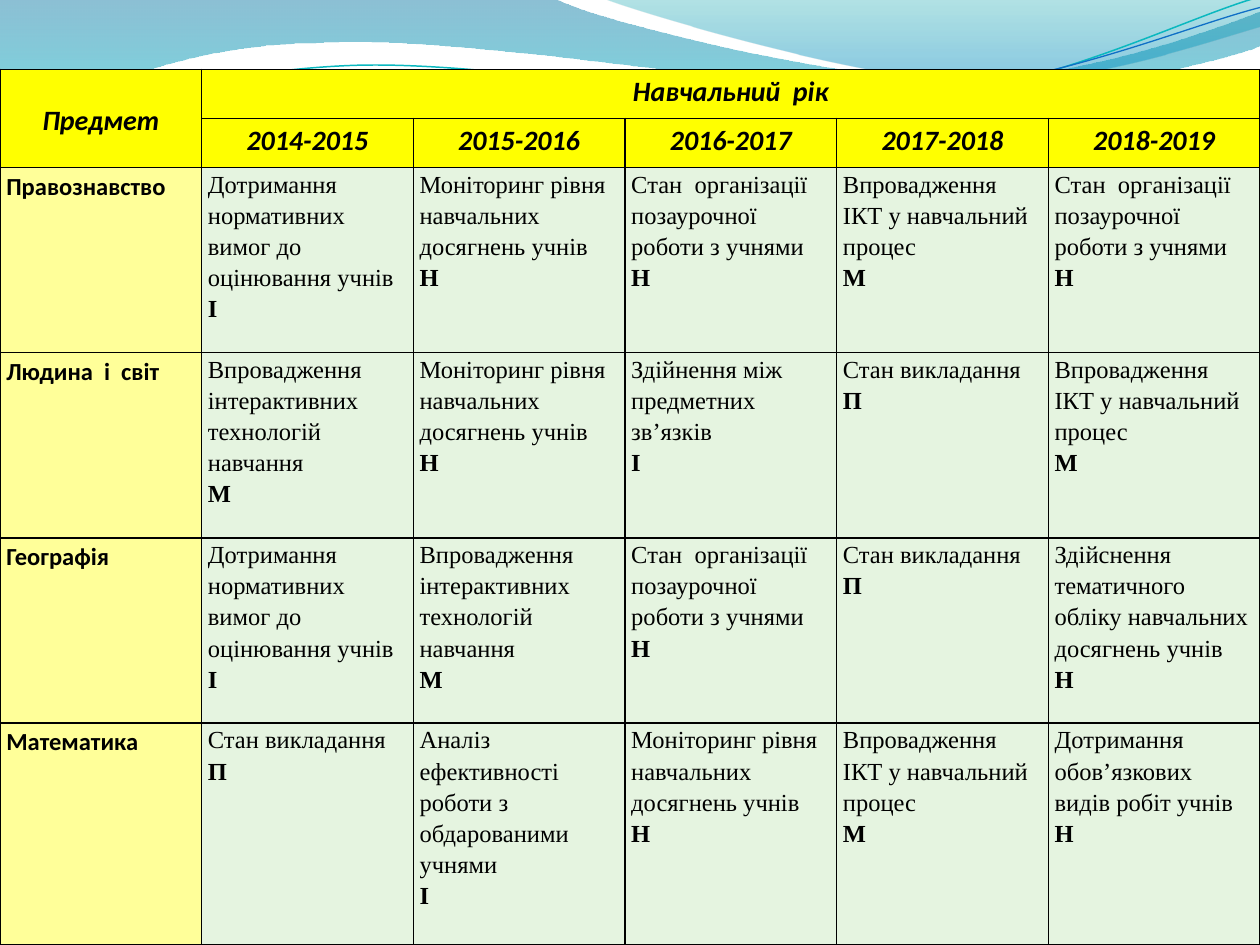
from math import cos, radians, sin

from lxml.etree import SubElement
from pptx import Presentation
from pptx.dml.color import RGBColor
from pptx.enum.text import MSO_ANCHOR, PP_ALIGN
from pptx.oxml.ns import qn
from pptx.util import Inches, Pt

BLACK = RGBColor(0x00, 0x00, 0x00)
YELLOW = RGBColor(0xFF, 0xFF, 0x00)
PALE_YELLOW = RGBColor(0xFF, 0xFF, 0x99)
PALE_GREEN = RGBColor(0xE5, 0xF4, 0xE0)
DEEP_BLUE = RGBColor(0x00, 0x74, 0xA1)
AQUA = RGBColor(0x00, 0xC6, 0xCF)
TEAL = RGBColor(0x00, 0xA1, 0xA9)
SKY_BLUE = RGBColor(0x00, 0x8B, 0xBF)
LINE_TEAL = RGBColor(0x0A, 0xB8, 0xBF)
LINE_BLUE = RGBColor(0x0F, 0x6F, 0xC6)
TILT = 2.7


def draw_wave(shapes, start, segments, close):
    points = [start] + [point for segment in segments for point in segment]
    corners = [(Inches(x), Inches(y)) for x, y in points]
    builder = shapes.build_freeform(*corners[0], scale=1.0)
    builder.add_line_segments(corners[1:], close=close)
    wave = builder.convert_to_shape()
    wave.shadow.inherit = False
    steps = iter(list(wave._element.spPr.iter(qn("a:lnTo"))))
    for segment in segments:
        pieces = [next(steps) for point in segment]
        if len(pieces) == 3:
            curve = pieces[0]
            curve.tag = qn("a:cubicBezTo")
            for piece in pieces[1:]:
                curve.append(piece[0])
                piece.getparent().remove(piece)
    return wave


def write(para, text, font="Calibri", size=14, bold=False, italic=False, align=PP_ALIGN.LEFT):
    para.alignment = align
    para.line_spacing = 1.15
    span = para.add_run()
    span.text = text
    span.font.name = font
    span.font.size = Pt(size)
    span.font.bold = bold
    span.font.italic = italic
    span.font.color.rgb = BLACK


deck = Presentation()
deck.slide_width = Inches(10)
deck.slide_height = Inches(7.5)
page = deck.slides.add_slide(deck.slide_layouts[6])

bands = [
    ((0, -0.01), [
        [(4.4, -0.01)],
        [(4.76, 0.17), (6.64, 0.63), (7.58, 0.63)],
        [(8.53, 0.63), (9.58, 0.26), (10, 0.09)],
        [(10.01, 0.36)],
        [(9.83, 0.44), (8.7, 0.76), (7.46, 0.75)],
        [(6.22, 0.75), (3.82, 0.28), (2.57, 0.34)],
        [(1.29, 0.35), (0.46, 0.83), (-0.01, 1.13)],
        [(0, -0.01)],
    ], [(0, DEEP_BLUE, 45), (1, AQUA, 55)]),
    ((4.79, -0.01), [
        [(5.09, 0.11), (6.82, 0.62), (7.69, 0.65)],
        [(8.56, 0.69), (9.61, 0.32), (10, 0.21)],
        [(10, 0)],
        [(4.79, -0.01)],
    ], [(0, TEAL, 30), (0.8, SKY_BLUE, 45)]),
]
for start, segments, stops in bands:
    band = draw_wave(page.shapes, start, segments, True)
    band.line.fill.background()
    band.fill.gradient()
    band.fill.gradient_angle = 270
    for stop, (position, color, opacity) in zip(band.fill.gradient_stops, stops):
        stop.position = position
        stop.color.rgb = color
    for node, (position, color, opacity) in zip(band._element.spPr.iter(qn("a:srgbClr")), stops):
        SubElement(node, qn("a:alpha"), val=str(opacity * 1000))

strands = [
    ([(0, 1.11),
      (0.48, 0.93), (1.58, 0.57), (2.77, 0.52),
      (3.95, 0.47), (5.93, 0.89), (7.13, 0.8),
      (8.33, 0.71), (9.38, 0.15), (9.98, -0.02)], (4.99, 0.58), LINE_TEAL, 0.85),
    ([(0, 1.04),
      (0.47, 0.96), (1.64, 0.61), (2.83, 0.56),
      (4.03, 0.51), (5.97, 0.83), (7.17, 0.75),
      (8.36, 0.67), (9.41, 0.21), (10, 0.06)], (5, 0.59), LINE_BLUE, 0.75),
]
cosine, sine = cos(radians(TILT)), sin(radians(TILT))
for points, (middle_x, middle_y), color, width in strands:
    level = [(middle_x + (x - middle_x) * cosine - (y - middle_y) * sine,
              middle_y + (x - middle_x) * sine + (y - middle_y) * cosine) for x, y in points]
    curves = [level[first:first + 3] for first in (1, 4, 7)]
    strand = draw_wave(page.shapes, level[0], curves, False)
    strand.rotation = 360 - TILT
    strand.fill.background()
    strand.line.color.rgb = color
    strand.line.width = Pt(width)

GRADING = ("Дотримання нормативних вимог до оцінювання учнів", "І")
MONITORING = ("Моніторинг рівня навчальних досягнень учнів", "Н")
EXTRACURRICULAR = ("Стан  організації позаурочної роботи з учнями", "Н")
DIGITAL = ("Впровадження ІКТ у навчальний процес", "М")
INTERACTIVE = ("Впровадження інтерактивних технологій навчання", "М")
TEACHING = ("Стан викладання", "П")
subjects = {
    "Правознавство": [GRADING, MONITORING, EXTRACURRICULAR, DIGITAL, EXTRACURRICULAR],
    "Людина  і  світ": [INTERACTIVE, MONITORING, ("Здійнення між предметних зв’язків", "І"),
                        TEACHING, DIGITAL],
    "Географія": [GRADING, INTERACTIVE, EXTRACURRICULAR, TEACHING,
                  ("Здійснення тематичного обліку навчальних досягнень учнів", "Н")],
    "Математика": [TEACHING, ("Аналіз ефективності роботи з обдарованими учнями", "І"),
                   MONITORING, DIGITAL, ("Дотримання обов’язкових видів робіт учнів", "Н")],
}

frame = page.shapes.add_table(6, 6, Inches(0), Inches(0.55), Inches(10), Inches(6.95))
table = frame.table
table.first_row = False
table.horz_banding = False
for column, width in zip(table.columns, [1.6] + [1.68] * 5):
    column.width = Inches(width)
for row, height in zip(table.rows, [0.39] * 2 + [1.47] * 3 + [1.76]):
    row.height = Inches(height)

for row in range(6):
    for column in range(6):
        cell = table.cell(row, column)
        cell.margin_left = cell.margin_right = Inches(0.05)
        cell.margin_top = cell.margin_bottom = 0
        properties = cell._tc.get_or_add_tcPr()
        for side in ("a:lnL", "a:lnR", "a:lnT", "a:lnB"):
            border = SubElement(properties, qn(side), w=str(Pt(1)))
            SubElement(SubElement(border, qn("a:solidFill")), qn("a:srgbClr"), val=str(BLACK))
        cell.fill.solid()
        cell.fill.fore_color.rgb = YELLOW if row < 2 else PALE_GREEN if column else PALE_YELLOW

table.cell(0, 0).merge(table.cell(1, 0))
table.cell(0, 1).merge(table.cell(0, 5))
table.cell(0, 0).vertical_anchor = MSO_ANCHOR.MIDDLE

headings = [(0, 0, "Предмет"), (0, 1, "Навчальний  рік")]
headings += [(1, column, f"{2013 + column}-{2014 + column}") for column in range(1, 6)]
for row, column, text in headings:
    write(table.cell(row, column).text_frame.paragraphs[0], text,
          size=16, bold=True, italic=True, align=PP_ALIGN.CENTER)

for row, (subject, topics) in enumerate(subjects.items(), start=2):
    write(table.cell(row, 0).text_frame.paragraphs[0], subject, bold=True)
    for column, (topic, mark) in enumerate(topics, start=1):
        text_frame = table.cell(row, column).text_frame
        write(text_frame.paragraphs[0], topic, font="Times New Roman")
        write(text_frame.add_paragraph(), mark, font="Times New Roman", bold=True)

deck.save("out.pptx")
